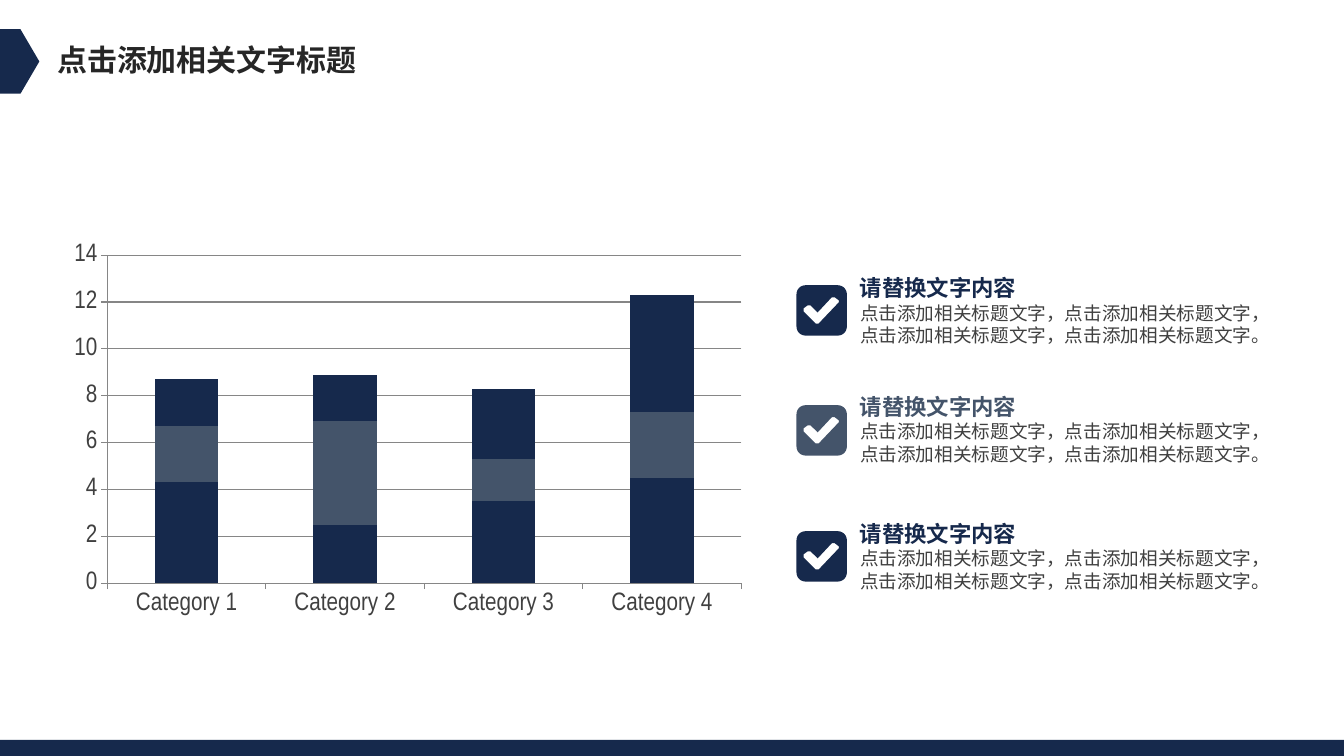
from math import cos, pi, sin

from lxml import etree
from pptx import Presentation
from pptx import util as u
from pptx.chart.data import CategoryChartData
from pptx.dml.color import RGBColor
from pptx.enum import chart as ch, shapes, text
from pptx.oxml.ns import qn

PX = 9144
THEME = {
    "navy": "16294C", "slate": "44546A", "ink": "262626", "body": "404040", "rule": "868686",
    "cjk": "Noto Sans CJK SC", "latin": "Arial Narrow",
    "title_pt": 21.4, "heading_pt": 16, "body_pt": 13.3, "axis_pt": 18,
}
INSETS = ("margin_left", "margin_top", "margin_right", "margin_bottom")
POINTS_HEADING = "请替换文字内容"
POINTS_BODY = "点击添加相关标题文字，" * 3 + "点击添加相关标题文字。"
POINTS = [(272, 283, "navy"), (390, 402, "slate"), (516, 527, "navy")]
TICK = [(42, 17), (42, 15), (38, 12), (35, 12), (21, 27), (14, 20),
        (11, 20), (7, 23), (7, 26), (19, 38), (22, 38)]


def px(*lengths):
    """Turn px lengths into EMU."""
    return [u.Emu(length * PX) for length in lengths]


def colour(name):
    """Look up a theme colour."""
    return RGBColor.from_string(THEME[name])


def apply(target, values):
    """Set attributes of target from a dict."""
    for name, value in values.items():
        setattr(target, name, value)


def paint(shape, fill):
    """Give a shape a flat fill with no outline or shadow."""
    shape.shadow.inherit = False
    shape.fill.solid()
    shape.fill.fore_color.rgb = colour(fill)
    shape.line.fill.background()


def add_block(slide, preset, box, fill):
    """Add a flat preset shape."""
    block = slide.shapes.add_shape(preset, *px(*box))
    paint(block, fill)
    return block


def add_text(slide, box, words, size, ink, bold=False, wrap=False, insets=(0, 0, 0, 0)):
    """Add a one-paragraph text box in the CJK font."""
    frame = slide.shapes.add_textbox(*px(*box)).text_frame
    apply(frame, dict(zip(INSETS, px(*insets))))
    apply(frame, {"word_wrap": wrap, "auto_size": text.MSO_AUTO_SIZE.SHAPE_TO_FIT_TEXT})
    run = frame.paragraphs[0].add_run()
    run.text = words
    apply(run.font, {"size": u.Pt(THEME[size]), "bold": bold, "name": THEME["cjk"]})
    run.font.color.rgb = colour(ink)
    east_asian = etree.SubElement(run.font._element, qn("a:ea"))
    east_asian.set("typeface", THEME["cjk"])


def rounded_outline(side, radius, steps=8):
    """List the points of a rounded square, clockwise from its top left corner."""
    near, far = radius, side - radius
    centres = [(near, near), (far, near), (far, far), (near, far)]
    return [(x + radius * cos(angle), y + radius * sin(angle))
            for corner, (x, y) in enumerate(centres)
            for angle in (pi + pi / 2 * (corner + step / steps) for step in range(steps + 1))]


def add_checkbox(slide, left, top, fill):
    """Add a rounded square with a tick cut out of it."""
    outline, tick = ([(x * 10, y * 10) for x, y in points]
                     for points in (rounded_outline(50, 9), TICK))
    builder = slide.shapes.build_freeform(*outline[0], scale=PX / 10)
    builder.add_line_segments(outline[1:])
    builder.move_to(*tick[0])
    builder.add_line_segments(tick[1:])
    paint(builder.convert_to_shape(*px(left, top)), fill)


def add_point(slide, top, icon_top, accent):
    """Add a checkbox with its heading and description."""
    add_checkbox(slide, 790, icon_top, accent)
    add_text(slide, (853, top, 157, 27), POINTS_HEADING, "heading_pt", accent, bold=True)
    add_text(slide, (853, top + 27, 401, 45), POINTS_BODY, "body_pt", "body", wrap=True)


def add_stacked_chart(slide):
    """Add the stacked column chart."""
    data = CategoryChartData()
    data.categories = [f"Category {number}" for number in range(1, 5)]
    data.add_series("Series 1", (4.3, 2.5, 3.5, 4.5))
    data.add_series("Series 2", (2.4, 4.4, 1.8, 2.8))
    data.add_series("Series 3", (2, 2, 3, 5))
    chart = slide.shapes.add_chart(
        ch.XL_CHART_TYPE.COLUMN_STACKED, *px(60, 234, 689, 385), data).chart
    apply(chart, {"has_title": False, "has_legend": False})
    apply(chart.font, {"size": u.Pt(THEME["axis_pt"]), "name": THEME["latin"]})
    chart.font.color.rgb = colour("body")
    columns = chart.plots[0]
    apply(columns, {"gap_width": 150, "overlap": 100, "vary_by_categories": False})
    for series, fill in zip(columns.series, ("navy", "slate", "navy")):
        series.format.fill.solid()
        series.format.fill.fore_color.rgb = colour(fill)
    values = chart.value_axis
    apply(values, {"minimum_scale": 0, "maximum_scale": 14, "major_unit": 2,
                   "has_major_gridlines": True})
    for axis in (chart.category_axis, values):
        axis.major_tick_mark = ch.XL_TICK_MARK.OUTSIDE
    for part in (chart.category_axis, values, values.major_gridlines):
        part.format.line.color.rgb = colour("rule")
        part.format.line.width = u.Pt(0.75)


def main():
    """Build the slide and save it."""
    deck = Presentation()
    deck.slide_width, deck.slide_height = px(1333, 750)
    slide = deck.slides.add_slide(deck.slide_layouts[6])
    add_stacked_chart(slide)
    for point in POINTS:
        add_point(slide, *point)
    marker = add_block(slide, shapes.MSO_SHAPE.PENTAGON, (0, 29, 39, 64), "navy")
    marker.adjustments[0] = 0.48
    add_text(slide, (47, 36, 320, 46), "点击添加相关文字标题", "title_pt", "ink",
             bold=True, insets=(10, 5, 10, 5))
    add_block(slide, shapes.MSO_SHAPE.RECTANGLE, (0, 734, 1333, 16), "navy")
    deck.save("out.pptx")


if __name__ == "__main__":
    main()
